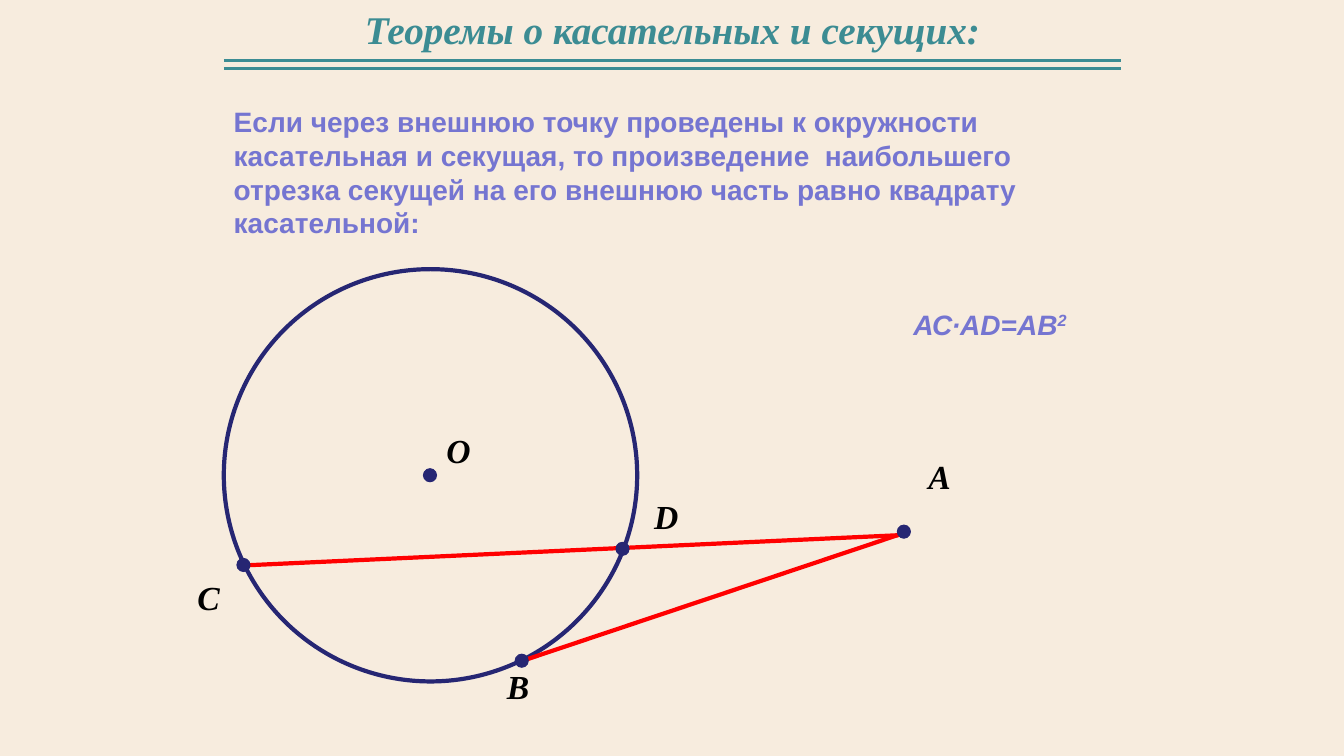
from typing import NamedTuple

from lxml.etree import SubElement
from pptx import Presentation
from pptx.dml.color import RGBColor
from pptx.enum.shapes import MSO_CONNECTOR, MSO_SHAPE
from pptx.enum.text import MSO_ANCHOR, MSO_AUTO_SIZE, PP_ALIGN
from pptx.oxml.ns import qn
from pptx.util import Inches, Pt

TEAL, LILAC, NAVY = "3C8C93", "7575D1", "262673"
RED, BLACK, CREAM = "FF0000", "000000", "F7ECDE"
SERIF, SANS = "Times New Roman", "Arial"
DOT = 0.13


class Box(NamedTuple):
    left: float
    top: float
    width: float
    height: float


class Style(NamedTuple):
    font: str
    size: float
    color: str
    italic: bool = True


class Line(NamedTuple):
    x1: float
    y1: float
    x2: float
    y2: float
    color: str
    width: float


class Point(NamedTuple):
    name: str
    x: float
    y: float
    label_x: float
    label_y: float


LINES = [
    Line(2.22, 0.6, 11.12, 0.6, TEAL, 2.25),
    Line(2.22, 0.68, 11.12, 0.68, TEAL, 2.25),
    Line(9.02, 5.27, 5.17, 6.56, RED, 3),
    Line(8.91, 5.31, 2.41, 5.61, RED, 3),
]
POINTS = [
    Point("O", 4.2, 4.65, 4.33, 4.22),
    Point("B", 5.11, 6.49, 4.93, 6.56),
    Point("А", 8.9, 5.21, 9.11, 4.47),
    Point("D", 6.11, 5.38, 6.39, 4.87),
    Point("C", 2.35, 5.54, 1.86, 5.67),
]
THEOREM = (
    "Если через внешнюю точку проведены к окружности касательная и секущая, "
    "то произведение  наибольшего отрезка секущей на его внешнюю часть "
    "равно квадрату касательной:"
)


def rgb(color: str) -> RGBColor:
    return RGBColor.from_string(color)


def format_run(r, style: Style) -> None:
    r.font.name, r.font.size = style.font, Pt(style.size)
    r.font.bold, r.font.italic = True, style.italic
    r.font.color.rgb = rgb(style.color)


def add_text(s, box: Box, text: str, style: Style):
    sp = s.shapes.add_textbox(*map(Inches, box))
    tf = sp.text_frame
    tf.word_wrap = True
    tf.text = text
    format_run(tf.paragraphs[0].runs[0], style)
    return tf.paragraphs[0]


def add_title(s, box: Box, text: str, style: Style) -> None:
    sp = s.shapes.title
    sp.left, sp.top, sp.width, sp.height = map(Inches, box)
    tf = sp.text_frame
    tf.text = text
    tf.auto_size = MSO_AUTO_SIZE.NONE
    tf.vertical_anchor = MSO_ANCHOR.MIDDLE
    p = tf.paragraphs[0]
    p.alignment = PP_ALIGN.CENTER
    format_run(p.runs[0], style)


def add_line(s, line: Line) -> None:
    ends = map(Inches, (line.x1, line.y1, line.x2, line.y2))
    sp = s.shapes.add_connector(MSO_CONNECTOR.STRAIGHT, *ends)
    sp.line.color.rgb = rgb(line.color)
    sp.line.width = Pt(line.width)
    SubElement(sp._element.spPr, qn("a:effectLst"))


def add_ellipse(s, box: Box, width: float, filled: bool) -> None:
    sp = s.shapes.add_shape(MSO_SHAPE.OVAL, *map(Inches, box))
    sp.shadow.inherit = False
    if filled:
        sp.fill.solid()
        sp.fill.fore_color.rgb = rgb(NAVY)
    else:
        sp.fill.background()
    sp.line.color.rgb = rgb(NAVY)
    sp.line.width = Pt(width)


def add_formula(s, box: Box, style: Style) -> None:
    p = add_text(s, box, "АС∙АD=АВ", style)
    r = p.add_run()
    r.text = "2"
    format_run(r, style)
    r._r.get_or_add_rPr().set("baseline", "30000")


def main() -> None:
    """Build the tangent and secant theorem slide."""
    prs = Presentation()
    prs.slide_width, prs.slide_height = Inches(13.33), Inches(7.5)
    s = prs.slides.add_slide(prs.slide_layouts[5])
    s.background.fill.solid()
    s.background.fill.fore_color.rgb = rgb(CREAM)

    add_title(s, Box(1.67, 0, 10, 0.57), "Теоремы о касательных и секущих:",
              Style(SERIF, 28, TEAL))
    add_text(s, Box(2.22, 0.99, 8.9, 1.45), THEOREM, Style(SANS, 20, LILAC, False))
    add_formula(s, Box(8.96, 3, 2.16, 0.44), Style(SANS, 20, LILAC))

    add_ellipse(s, Box(2.22, 2.67, 4.1, 4.09), 3, False)
    for line in LINES:
        add_line(s, line)
    for point in POINTS:
        add_ellipse(s, Box(point.x, point.y, DOT, DOT), 0.75, True)
        add_text(s, Box(point.label_x, point.label_y, 0.55, 0.5), point.name,
                 Style(SERIF, 24, BLACK))

    prs.save("out.pptx")


if __name__ == "__main__":
    main()
